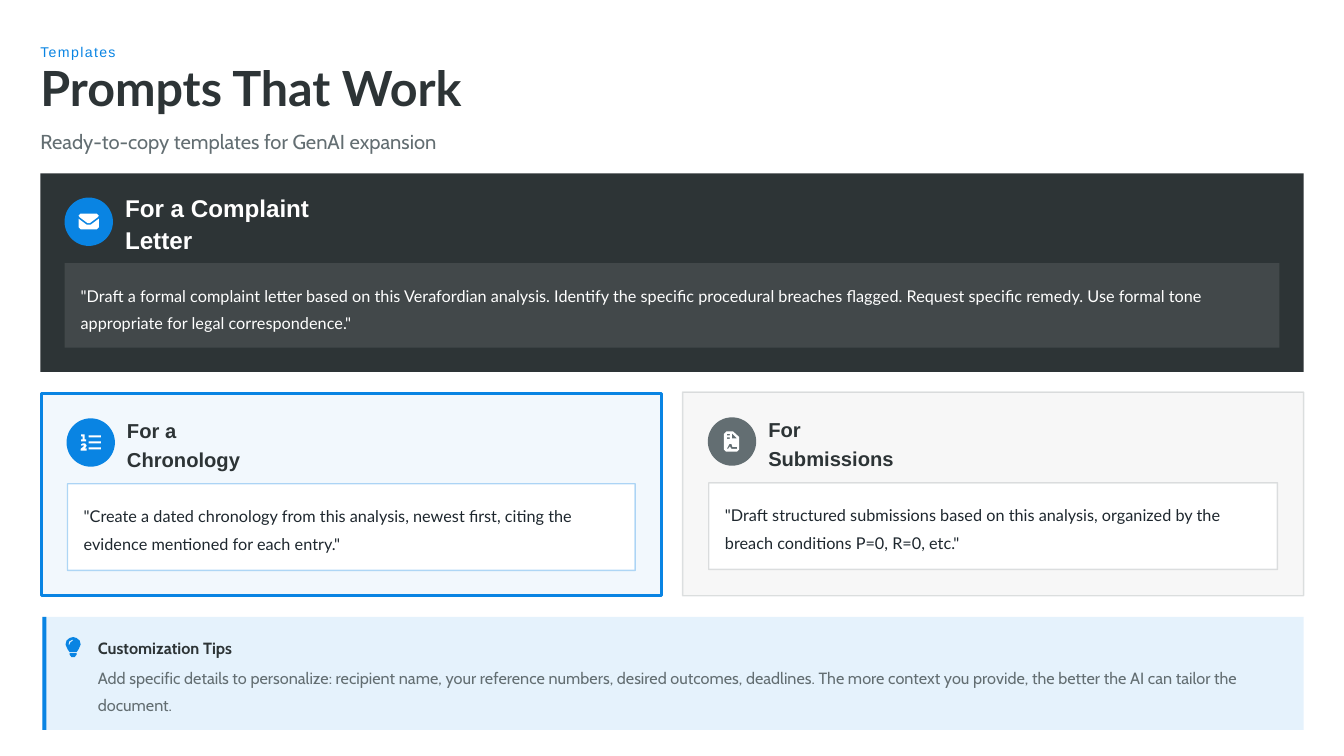
from lxml import etree
from pptx import Presentation
from pptx.dml.color import RGBColor
from pptx.enum.shapes import MSO_SHAPE
from pptx.enum.text import MSO_ANCHOR, MSO_AUTO_SIZE, PP_ALIGN
from pptx.oxml.ns import qn
from pptx.util import Inches, Pt

RECTANGLE, OVAL = MSO_SHAPE.RECTANGLE, MSO_SHAPE.OVAL
MIDDLE = MSO_ANCHOR.MIDDLE
LEFT = PP_ALIGN.LEFT
NO_AUTOFIT = MSO_AUTO_SIZE.NONE

COLORS = {
    "blue": "0984E3",
    "dark": "2D3436",
    "gray": "636E72",
    "ink": "1E272E",
    "white": "FFFFFF",
}
ICON_UNIT = 0.005  # inches per icon grid step


def bar(left, top, right, bottom):
    return [(left, top), (right, top), (right, bottom), (left, bottom)]


# Each icon is a list of closed outlines; an inner outline cuts a hole.
ENVELOPE = [
    [(4, 4), (36, 4), (40, 8), (38, 11), (22, 23), (18, 23), (2, 11), (0, 8)],
    [(0, 14), (16, 26), (24, 26), (40, 14), (40, 31), (36, 35), (4, 35), (0, 31)],
]
NUMBERED_LIST = [
    [(1, 4), (8, 4), (8, 14), (11, 14), (11, 18), (1, 18), (1, 14), (4, 14),
     (4, 8), (1, 8)],
    [(1, 24), (4, 22), (9, 22), (12, 26), (10, 30), (7, 32), (12, 32), (12, 36),
     (0, 36), (0, 33), (7, 27), (5, 25), (2, 27)],
] + [bar(16, top, 40, top + 4) for top in (6, 18, 30)]
SIGNED_FILE = [
    [(0, 5), (5, 0), (18, 0), (30, 11), (30, 36), (26, 40), (4, 40), (0, 36)],
    [(16, 4), (26, 14), (16, 14)],
    bar(6, 5, 12, 8),
    bar(6, 12, 12, 15),
    [(6, 34), (11, 25), (15, 25), (17, 31), (26, 31), (26, 35), (15, 35),
     (12, 30), (8, 35)],
]
BULB = [
    [(8, 30), (4, 24), (0, 15), (2, 7), (8, 2), (15, 0), (22, 2), (28, 7),
     (30, 15), (26, 24), (22, 30)],
    [(8, 32), (22, 32), (22, 35), (18, 40), (12, 40), (8, 35)],
    [(14, 5), (14, 8), (10, 10), (8, 15), (6, 15), (7, 9)],
]


class SlideBuilder:
    def __init__(self, page):
        self.page = page

    def paint(self, fill, color, opacity=100):
        """Set a solid colour, with opacity in percent."""
        fill.solid()
        fill.fore_color.rgb = RGBColor.from_string(COLORS[color])
        if opacity < 100:
            # The fill element belongs either to the shape or to its outline.
            solid = fill._xPr.find(qn("a:solidFill"))
            alpha = etree.SubElement(solid[0], qn("a:alpha"))
            alpha.set("val", str(opacity * 1000))

    def shape(self, kind, area, color, opacity=100, line=None):
        """Draw a preset shape; line is (colour, points, opacity)."""
        shape = self.page.shapes.add_shape(kind, *map(Inches, area))
        shape.shadow.inherit = False
        self.paint(shape.fill, color, opacity)
        if line:
            line_color, points, line_opacity = line
            shape.line.width = Pt(points)
            self.paint(shape.line.fill, line_color, line_opacity)
        else:
            shape.line.fill.background()

    def icon(self, outlines, left, top, color="white"):
        first, *others = outlines
        builder = self.page.shapes.build_freeform(
            *first[0], scale=Inches(ICON_UNIT))
        builder.add_line_segments(first[1:], close=True)
        for outline in others:
            builder.move_to(*outline[0])
            builder.add_line_segments(outline[1:], close=True)
        shape = builder.convert_to_shape(Inches(left), Inches(top))
        shape.shadow.inherit = False
        self.paint(shape.fill, color)
        shape.line.fill.background()

    def fill_text(self, box, words, font, size, color, spacing, bold=False,
                  inset=0, tracking=0):
        frame = box.text_frame
        frame.word_wrap = True
        frame.auto_size = NO_AUTOFIT
        frame.vertical_anchor = MIDDLE
        frame.margin_left = frame.margin_right = Inches(inset)
        frame.margin_top = frame.margin_bottom = Inches(inset)
        para = frame.paragraphs[0]
        para.alignment = LEFT
        para.line_spacing = spacing
        para.space_before = Pt(0)
        span = para.add_run()
        span.text = words
        span.font.name = font
        span.font.size = Pt(size)
        span.font.bold = bold
        span.font.color.rgb = RGBColor.from_string(COLORS[color])
        if tracking:
            span.font._element.set("spc", str(tracking * 100))

    def title(self, area, words):
        box = self.page.shapes.title
        box.left, box.top, box.width, box.height = map(Inches, area)
        self.fill_text(box, words, "Lato", 34.6, "dark", 0.8, bold=True)

    def text(self, area, words, *style, **options):
        box = self.page.shapes.add_textbox(*map(Inches, area))
        self.fill_text(box, words, *style, **options)

    def badge(self, left, top, color, outlines, icon_left):
        self.shape(OVAL, (left, top, 0.48, 0.48), color)
        self.icon(outlines, left + icon_left, top + 0.14)

    def card(self, left, top, width, height, color, border, frame_opacity,
             outlines, icon_left, heading, heading_width, prompt):
        self.shape(RECTANGLE, (left, top, width, height), color, 5, border)
        self.badge(left + 0.25, top + 0.25, color, outlines, icon_left)
        self.text((left + 0.85, top + 0.35, heading_width, 0.28), heading,
                  "Arial", 14.4, "dark", 1.2, bold=True)
        self.shape(RECTANGLE, (left + 0.26, top + 0.9, width - 0.52, 0.86),
                   "white", line=(color, 1, frame_opacity))
        self.text((left + 0.42, top + 1.06, width - 0.76, 0.52), prompt,
                  "Lato", 11.6, "ink", 1.4)


def main():
    deck = Presentation()
    deck.slide_width, deck.slide_height = Inches(13.33), Inches(7.5)
    slide = SlideBuilder(deck.slides.add_slide(deck.slide_layouts[5]))

    slide.text((0.4, 0.4, 12.6, 0.2), "Templates",
               "Arial", 10.1, "blue", 1.2, tracking=1)
    slide.title((0.4, 0.68, 12.77, 0.48), "Prompts That Work")
    slide.text((0.4, 1.24, 12.63, 0.28),
               "Ready-to-copy templates for GenAI expansion",
               "Cabin", 14.4, "gray", 1.2)

    slide.shape(RECTANGLE, (0.4, 1.72, 12.53, 1.97), "dark")
    slide.badge(0.64, 1.96, "blue", ENVELOPE, 0.14)
    slide.text((1.24, 2.05, 2.48, 0.32), "For a Complaint Letter",
               "Arial", 17.3, "white", 1.1, bold=True)
    slide.shape(RECTANGLE, (0.64, 2.61, 12.05, 0.84), "white", 10)
    slide.text((0.64, 2.61, 12.13, 0.84),
               '"Draft a formal complaint letter based on this Verafordian '
               'analysis. Identify the specific procedural breaches flagged. '
               'Request specific remedy. Use formal tone appropriate for '
               'legal correspondence."',
               "Lato", 11.6, "white", 1.4, inset=0.16)

    slide.card(0.41, 3.9, 6.15, 2.01, "blue", ("blue", 2, 100), 30,
               NUMBERED_LIST, 0.14, "For a Chronology", 1.6,
               '"Create a dated chronology from this analysis, newest first, '
               'citing the evidence mentioned for each entry."')
    slide.card(6.77, 3.89, 6.16, 2.02, "gray", ("gray", 1, 20), 20,
               SIGNED_FILE, 0.16, "For Submissions", 1.56,
               '"Draft structured submissions based on this analysis, '
               'organized by the breach conditions P=0, R=0, etc."')

    slide.shape(RECTANGLE, (0.42, 6.12, 12.51, 1.12), "blue", 10)
    slide.shape(RECTANGLE, (0.42, 6.12, 0.04, 1.12), "blue")
    slide.icon(BULB, 0.65, 6.32, "blue")
    slide.text((0.97, 6.28, 11.88, 0.24), "Customization Tips",
               "Cabin", 11.6, "dark", 1.3, bold=True)
    slide.text((0.97, 6.56, 11.88, 0.52),
               "Add specific details to personalize: recipient name, your "
               "reference numbers, desired outcomes, deadlines. The more "
               "context you provide, the better the AI can tailor the document.",
               "Cabin", 11.6, "gray", 1.4)

    deck.save("out.pptx")


if __name__ == "__main__":
    main()
